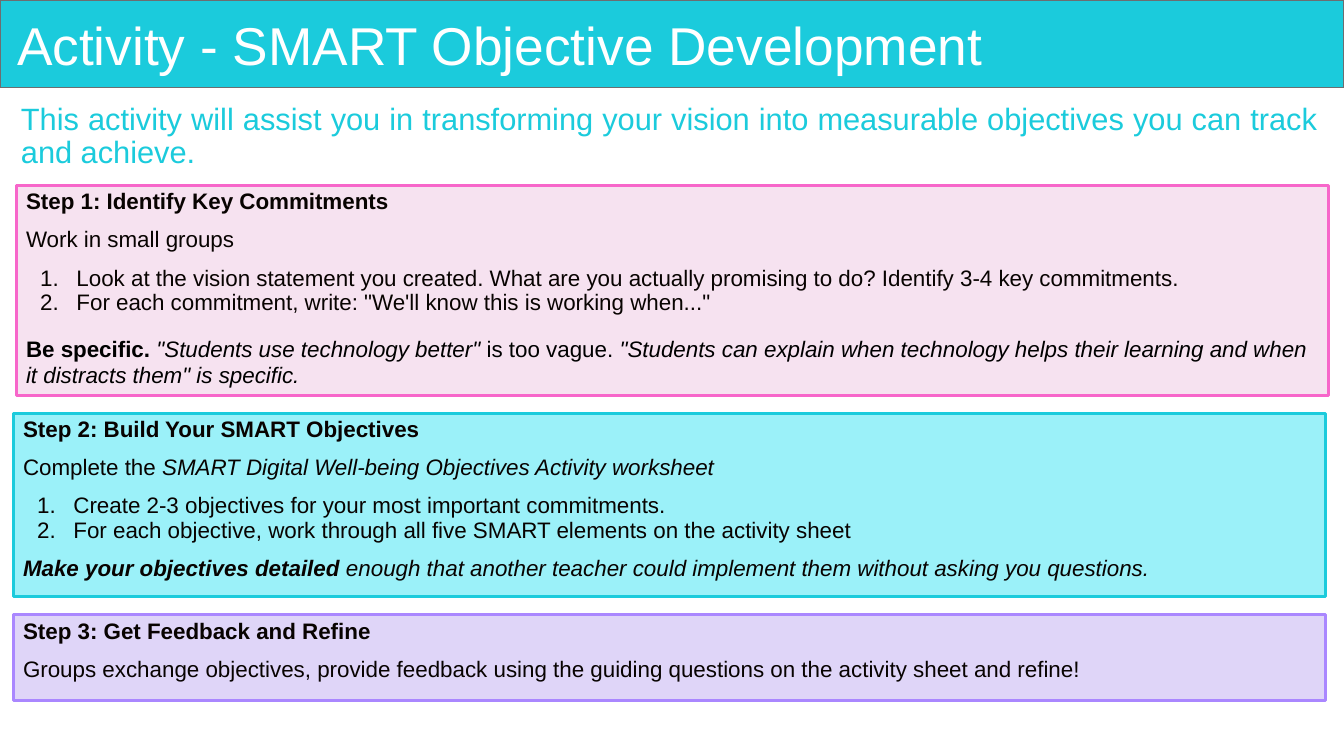
from dataclasses import dataclass

from lxml import etree
from pptx import Presentation
from pptx.dml.color import RGBColor
from pptx.enum.shapes import MSO_SHAPE
from pptx.enum.text import MSO_ANCHOR, PP_ALIGN
from pptx.oxml.ns import qn
from pptx.util import Inches, Pt


@dataclass(frozen=True)
class Theme:
    font: str = "Arial"
    title_size: float = 38
    intro_size: float = 22
    step_size: float = 16
    white: str = "FFFFFF"
    cyan: str = "1BCBDC"
    cyan_light: str = "9BF1F9"
    pink: str = "F766CA"
    pink_light: str = "F6E2F0"
    violet: str = "AA87FF"
    violet_light: str = "DFD5F8"
    grey: str = "6C6E70"
    ink: str = "080301"
    black: str = "000000"


@dataclass(frozen=True)
class Span:
    text: str
    bold: bool = False
    italic: bool = False


@dataclass(frozen=True)
class Para:
    spans: tuple[Span, ...]
    before: float = 10
    spacing: float = 0.9
    numbered: bool = False
    color: str = Theme.ink
    size: float = Theme.step_size
    align: PP_ALIGN = PP_ALIGN.LEFT


@dataclass(frozen=True)
class Step:
    left: float
    top: float
    height: float
    fill: str
    line: str
    paras: tuple[Para, ...]


THEME = Theme()
STEP_WIDTH = 13.02


def heading(text: str) -> Para:
    return Para((Span(text, bold=True),), before=0)


def plain(text: str) -> Para:
    return Para((Span(text),))


def numbered(*items: str) -> tuple[Para, ...]:
    return tuple(Para((Span(item),), before=0 if index else 10, numbered=True)
                 for index, item in enumerate(items))


STEPS = (
    Step(0.16, 1.84, 2.08, THEME.pink_light, THEME.pink, (
        heading("Step 1: Identify Key Commitments"),
        plain("Work in small groups"),
        *numbered(
            "Look at the vision statement you created. What are you actually promising to do? "
            "Identify 3-4 key commitments.",
            "For each commitment, write: \"We'll know this is working when...\""),
        Para((Span("Be specific. ", bold=True),
              Span('"Students use technology better"', italic=True),
              Span(" is too vague. "),
              Span('"Students can explain when technology helps their learning and when '
                   'it distracts them" is specific.', italic=True)),
             before=14, spacing=1.0, color=THEME.black))),
    Step(0.13, 4.1, 1.82, THEME.cyan_light, THEME.cyan, (
        heading("Step 2: Build Your SMART Objectives"),
        Para((Span("Complete the "),
              Span("SMART Digital Well-being Objectives Activity worksheet", italic=True))),
        *numbered(
            "Create 2-3 objectives for your most important commitments.",
            "For each objective, work through all five SMART elements on the activity sheet"),
        Para((Span("Make your objectives detailed ", bold=True, italic=True),
              Span("enough that another teacher could implement them without asking you "
                   "questions.", italic=True))))),
    Step(0.13, 6.1, 0.85, THEME.violet_light, THEME.violet, (
        heading("Step 3: Get Feedback and Refine"),
        plain("Groups exchange objectives, provide feedback using the guiding questions "
              "on the activity sheet and refine!"))),
)


def add_number(paragraph, color: str) -> None:
    """Give a paragraph a hanging automatic number."""
    properties = paragraph._p.get_or_add_pPr()
    properties.set("marL", str(Inches(0.5)))
    properties.set("indent", str(Inches(-0.36)))
    bullet_color = etree.SubElement(properties, qn("a:buClr"))
    etree.SubElement(bullet_color, qn("a:srgbClr"), val=color)
    etree.SubElement(properties, qn("a:buFont"), typeface=THEME.font)
    etree.SubElement(properties, qn("a:buAutoNum"), type="arabicPeriod")


def write_text(shape, paras: tuple[Para, ...], anchor: MSO_ANCHOR,
               side: float = 0.1, edge: float = 0.05) -> None:
    frame = shape.text_frame
    frame.word_wrap = True
    frame.vertical_anchor = anchor
    frame.margin_left = frame.margin_right = Inches(side)
    frame.margin_top = frame.margin_bottom = Inches(edge)
    for index, para in enumerate(paras):
        paragraph = frame.add_paragraph() if index else frame.paragraphs[0]
        paragraph.alignment = para.align
        paragraph.line_spacing = para.spacing
        paragraph.space_before = Pt(para.before)
        if para.numbered:
            add_number(paragraph, para.color)
        paragraph.font.name = THEME.font
        paragraph.font.size = Pt(para.size)
        paragraph.font.color.rgb = RGBColor.from_string(para.color)
        for span in para.spans:
            run = paragraph.add_run()
            run.text = span.text
            run.font.bold = span.bold
            run.font.italic = span.italic


def add_panel(page, left: float, top: float, width: float, height: float,
              fill: str, line: str, weight: float):
    panel = page.shapes.add_shape(MSO_SHAPE.RECTANGLE, Inches(left), Inches(top),
                                  Inches(width), Inches(height))
    panel.shadow.inherit = False
    panel.fill.solid()
    panel.fill.fore_color.rgb = RGBColor.from_string(fill)
    panel.line.color.rgb = RGBColor.from_string(line)
    panel.line.width = Pt(weight)
    return panel


def main() -> None:
    deck = Presentation()
    deck.slide_width, deck.slide_height = Inches(13.33), Inches(7.5)
    page = deck.slides.add_slide(deck.slide_layouts[6])

    # Title band
    add_panel(page, 0, 0, 13.33, 0.87, THEME.cyan, THEME.grey, 1)
    title = page.shapes.add_textbox(Inches(0.11), Inches(0.09), Inches(13.06), Inches(0.78))
    write_text(title, (Para((Span("Activity - SMART Objective Development"),), before=0,
                            color=THEME.white, size=THEME.title_size),),
               MSO_ANCHOR.MIDDLE, side=0.06, edge=0.06)

    # Introduction
    intro = page.shapes.add_textbox(Inches(0.11), Inches(0.88), Inches(13.06), Inches(0.96))
    write_text(intro, (Para((Span("This activity will assist you in transforming your vision into "
                                  "measurable objectives you can track and achieve."),), before=0,
                            color=THEME.cyan, size=THEME.intro_size, align=PP_ALIGN.JUSTIFY),),
               MSO_ANCHOR.MIDDLE)

    # Step panels
    for step in STEPS:
        panel = add_panel(page, step.left, step.top, STEP_WIDTH, step.height,
                          step.fill, step.line, 2.25)
        write_text(panel, step.paras, MSO_ANCHOR.TOP)

    deck.save("out.pptx")


if __name__ == "__main__":
    main()
